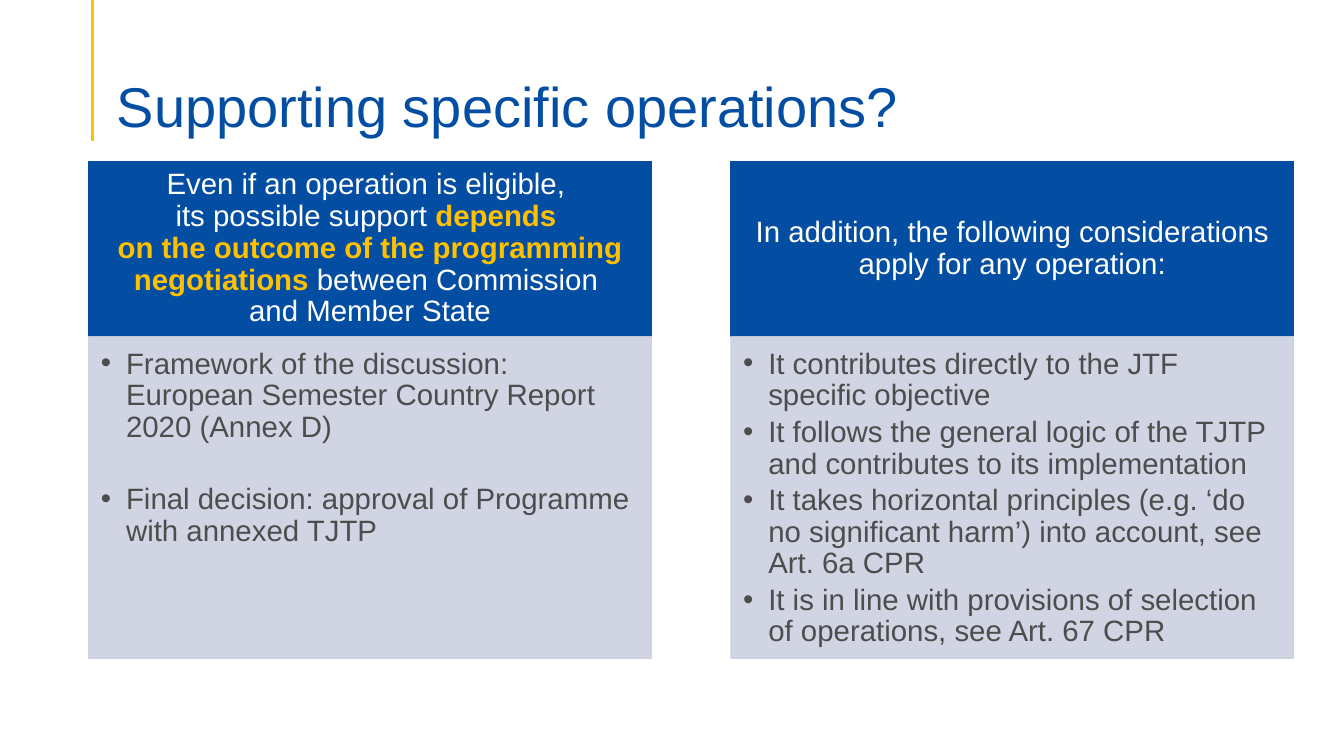
from dataclasses import dataclass

import pptx
import pptx.util
import pptx.dml.color
import pptx.enum.shapes
import pptx.enum.text
import pptx.oxml
import pptx.oxml.ns
from pptx.shapes.autoshape import Shape
from pptx.slide import Slide

Inches = pptx.util.Inches
Pt = pptx.util.Pt
Anchor = pptx.enum.text.MSO_ANCHOR
qn = pptx.oxml.ns.qn


@dataclass(frozen=True)
class Theme:
    font: str = "Arial"
    blue: str = "034EA2"
    gold: str = "FFC000"
    white: str = "FFFFFF"
    pale: str = "CCD0E0"
    grey: str = "4D4D4D"
    title_size: float = 40
    text_size: float = 21
    line_spacing: float = 0.9
    pale_opacity: int = 90


@dataclass(frozen=True)
class Span:
    text: str
    emphasis: bool = False


@dataclass(frozen=True)
class Point:
    text: str
    space_before: float = 0


@dataclass(frozen=True)
class Column:
    left: float
    heading: tuple[Span, ...]
    points: tuple[Point, ...]


THEME = Theme()
COLUMN_WIDTH = 5.58
HEADING_TOP, HEADING_HEIGHT = 1.6, 1.74
POINTS_HEIGHT = 3.19

COLUMNS = (
    Column(
        0.88,
        (
            Span("Even if an operation is eligible, \nits possible support "),
            Span("depends \non the outcome of the programming negotiations ", True),
            Span("between Commission \nand Member State"),
        ),
        (
            Point("Framework of the discussion: European Semester Country Report 2020 (Annex D)"),
            Point("Final decision: approval of Programme with annexed TJTP", 25.5),
        ),
    ),
    Column(
        7.25,
        (Span("In addition, the following considerations apply for any operation:"),),
        (
            Point("It contributes directly to the JTF specific objective"),
            Point("It follows the general logic of the TJTP and contributes to its implementation"),
            Point("It takes horizontal principles (e.g. ‘do no significant harm’) into account, see Art. 6a CPR"),
            Point("It is in line with provisions of selection of operations, see Art. 67 CPR"),
        ),
    ),
)


def rgb(color: str) -> pptx.dml.color.RGBColor:
    return pptx.dml.color.RGBColor.from_string(color)


def style_font(font: pptx.text.text.Font, size: float, color: str, bold: bool = False) -> None:
    font.name = THEME.font
    font.size = Pt(size)
    font.bold = bold
    font.color.rgb = rgb(color)


def set_frame(shape: Shape, anchor: Anchor, insets: tuple[float, float, float, float]) -> None:
    frame = shape.text_frame
    frame.word_wrap = True
    frame.vertical_anchor = anchor
    frame.margin_left, frame.margin_top, frame.margin_right, frame.margin_bottom = map(Inches, insets)


def add_panel(slide: Slide, left: float, top: float, height: float, color: str, opacity: int = 100) -> Shape:
    panel = slide.shapes.add_shape(
        pptx.enum.shapes.MSO_SHAPE.RECTANGLE,
        Inches(left), Inches(top), Inches(COLUMN_WIDTH), Inches(height),
    )
    panel.shadow.inherit = False
    panel.fill.solid()
    panel.fill.fore_color.rgb = rgb(color)
    panel.line.color.rgb = rgb(color)
    panel.line.width = Pt(1)
    if opacity < 100:
        for tint in panel.element.spPr.iter(qn("a:srgbClr")):
            pptx.oxml.ns
            alpha = tint.makeelement(qn("a:alpha"), {"val": str(opacity * 1000)})
            tint.append(alpha)
    return panel


def add_heading(slide: Slide, column: Column) -> None:
    panel = add_panel(slide, column.left, HEADING_TOP, HEADING_HEIGHT, THEME.blue)
    set_frame(panel, Anchor.MIDDLE, (0.16, 0.09, 0.16, 0.09))
    paragraph = panel.text_frame.paragraphs[0]
    paragraph.alignment = pptx.enum.text.PP_ALIGN.CENTER
    paragraph.line_spacing = THEME.line_spacing
    for span in column.heading:
        for index, line in enumerate(span.text.split("\n")):
            if index:
                paragraph.add_line_break()
            run = paragraph.add_run()
            run.text = line
            style_font(run.font, THEME.text_size, THEME.gold if span.emphasis else THEME.white, span.emphasis)


def add_points(slide: Slide, column: Column) -> None:
    panel = add_panel(
        slide, column.left, HEADING_TOP + HEADING_HEIGHT, POINTS_HEIGHT, THEME.pale, THEME.pale_opacity
    )
    set_frame(panel, Anchor.TOP, (0.12, 0.12, 0.16, 0.18))
    panel.text_frame.text = "\n".join(point.text for point in column.points)
    for point, paragraph in zip(column.points, panel.text_frame.paragraphs):
        paragraph.alignment = pptx.enum.text.PP_ALIGN.LEFT
        paragraph.line_spacing = THEME.line_spacing
        paragraph.space_after = Pt(3.3)
        if point.space_before:
            paragraph.space_before = Pt(point.space_before)
        properties = paragraph._p.get_or_add_pPr()
        properties.set("marL", str(Inches(0.25)))
        properties.set("indent", str(Inches(-0.25)))
        properties.append(properties.makeelement(qn("a:buFont"), {"typeface": THEME.font}))
        properties.append(properties.makeelement(qn("a:buChar"), {"char": "•"}))
        style_font(paragraph.runs[0].font, THEME.text_size, THEME.grey)


def add_title(slide: Slide, text: str) -> None:
    rule = slide.shapes.add_connector(
        pptx.enum.shapes.MSO_CONNECTOR.STRAIGHT, Inches(0.92), Inches(0), Inches(0.92), Inches(1.4)
    )
    rule.line.color.rgb = rgb(THEME.gold)
    rule.line.width = Pt(2.25)
    properties = rule.element.spPr
    properties.append(properties.makeelement(qn("a:effectLst"), {}))

    title = slide.shapes.add_textbox(Inches(1.06), Inches(0.53), Inches(11.5), Inches(0.86))
    set_frame(title, Anchor.BOTTOM, (0.1, 0.05, 0.1, 0))
    title.text_frame.text = text
    paragraph = title.text_frame.paragraphs[0]
    paragraph.line_spacing = THEME.line_spacing
    style_font(paragraph.runs[0].font, THEME.title_size, THEME.blue)


def main() -> None:
    presentation = pptx.Presentation()
    presentation.slide_width = Inches(13.33)
    presentation.slide_height = Inches(7.5)
    slide = presentation.slides.add_slide(presentation.slide_layouts[6])
    add_title(slide, "Supporting specific operations?")
    for column in COLUMNS:
        add_heading(slide, column)
        add_points(slide, column)
    presentation.save("out.pptx")


if __name__ == "__main__":
    main()
